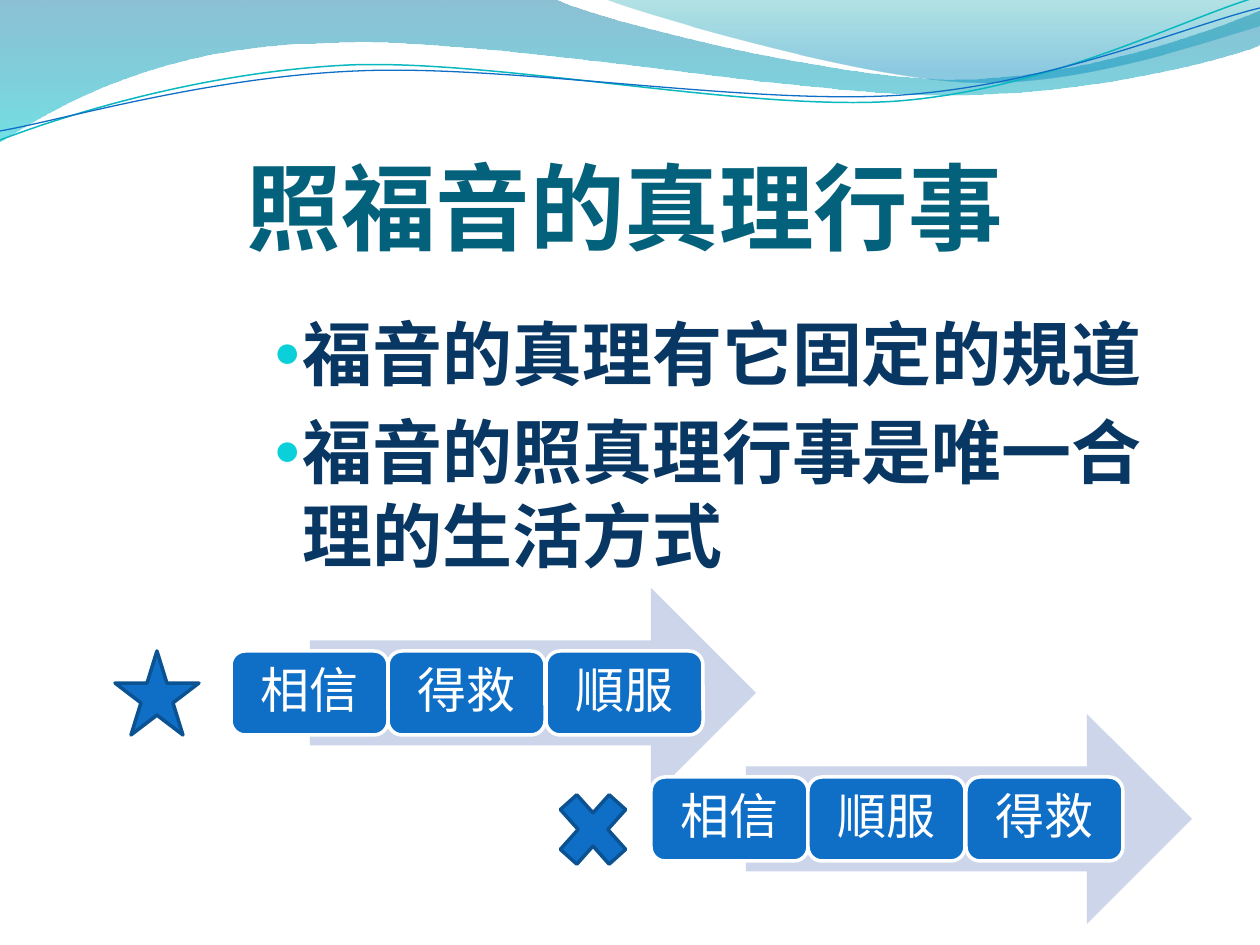
import pptx
import pptx.dml.color
import pptx.enum.shapes
import pptx.enum.text
import pptx.oxml
import pptx.oxml.ns
import pptx.util
from lxml import etree

PX = 914400 / 126
SHAPES = pptx.enum.shapes.MSO_SHAPE
ALIGN = pptx.enum.text.PP_ALIGN
ANCHOR = pptx.enum.text.MSO_ANCHOR
Pt = pptx.util.Pt
qn = pptx.oxml.ns.qn


def emu(*lengths):
    """Turn px lengths into a list of EMU values."""
    return [pptx.util.Emu(round(length * PX)) for length in lengths]


def rgb(value):
    return pptx.dml.color.RGBColor.from_string(value)


deck = pptx.Presentation()
deck.slide_width, deck.slide_height = emu(1260, 945)
slide = deck.slides.add_slide(deck.slide_layouts[1])
shapes = slide.shapes

# Waves: a start point, then steps of one point (line) or three points (cubic curve)
waves = [
    ((0, 0), [[(554, -1)], [(600, 21), (837, 79), (955, 79)],
              [(1075, 79), (1207, 33), (1260, 11)], [(1261, 45)],
              [(1239, 55), (1096, 96), (940, 95)],
              [(784, 94), (481, 35), (324, 43)],
              [(163, 45), (58, 105), (-1, 142)]],
     [(0, "0074A1", 45), (1, "00C6CF", 55)], None),
    ((604, -1), [[(641, 14), (859, 78), (969, 82)],
                 [(1079, 87), (1211, 40), (1260, 26)], [(1260, 0)]],
     [(0, "00A1A9", 30), (0.8, "008BBF", 45)], None),
    ((0, 140), [[(60, 117), (199, 72), (349, 65)],
                [(498, 59), (747, 112), (898, 101)],
                [(1050, 89), (1182, 19), (1257, -3)]], None, ("0AB8BF", 0.85)),
    ((0, 131), [[(59, 121), (207, 77), (357, 71)],
                [(508, 64), (752, 106), (903, 95)],
                [(1054, 84), (1186, 26), (1260, 8)]], None, ("0F6FC6", 0.75)),
]
for start, steps, gradient, stroke in waves:
    builder = shapes.build_freeform(*emu(*start))
    builder.add_line_segments([emu(*point) for step in steps for point in step],
                              close=gradient is not None)
    wave = builder.convert_to_shape()
    wave.shadow.inherit = False

    # Join each three line segments of a curve step into one cubic curve
    segments = iter(list(wave._element.spPr.iter(qn("a:lnTo"))))
    for step in steps:
        first, *others = [next(segments) for _ in step]
        if others:
            first.addprevious(curve := pptx.oxml.parse_xml(
                '<a:cubicBezTo xmlns:a="http://schemas.openxmlformats.org/drawingml/2006/main"/>'))
            for segment in [first] + others:
                curve.append(segment[0])
                segment.getparent().remove(segment)

    if gradient:
        wave.line.fill.background()
        wave.fill.gradient()
        wave.fill.gradient_angle = 270
        for stop, (position, color, opacity) in zip(wave.fill.gradient_stops, gradient):
            stop.position = position
            stop.color.rgb = rgb(color)
        for color_xml, (_, _, opacity) in zip(wave._element.spPr.iter(qn("a:srgbClr")), gradient):
            etree.SubElement(color_xml, qn("a:alpha")).set("val", str(opacity * 1000))
    else:
        wave.fill.background()
        wave.line.color.rgb = rgb(stroke[0])
        wave.line.width = Pt(stroke[1])

# Title and list
title = shapes.title
title.left, title.top, title.width, title.height = emu(42, 115, 1166, 147)
heading = title.text_frame
heading.text = "照福音的真理行事"
heading.auto_size = pptx.enum.text.MSO_AUTO_SIZE.NONE
heading.vertical_anchor = ANCHOR.BOTTOM
heading.margin_left, heading.margin_right, heading.margin_bottom = 0, 0, 0
heading.paragraphs[0].alignment = ALIGN.CENTER

body = slide.placeholders[1]
body.left, body.top, body.width, body.height = emu(126, 304, 1050, 577)
truths = body.text_frame
truths.text = "福音的真理有它固定的規道\n福音的照真理行事是唯一合理的生活方式"
truths.auto_size = pptx.enum.text.MSO_AUTO_SIZE.NONE
margin, hanging = emu(164, -29)
for truth in truths.paragraphs:
    truth.level = 2
    truth.line_spacing = Pt(48)
    truth.space_before = Pt(8)
    properties = truth._p.get_or_add_pPr()
    properties.set("marL", str(margin))
    properties.set("indent", str(hanging))
    bullet_color = etree.SubElement(properties, qn("a:buClr"))
    etree.SubElement(bullet_color, qn("a:srgbClr")).set("val", "0BD0D9")
    etree.SubElement(properties, qn("a:buSzPct")).set("val", "65000")
    etree.SubElement(properties, qn("a:buChar")).set("char", "●")

for frame, size, color in ((heading, 54, "04617B"), (truths, 40, "083763")):
    for paragraph in frame.paragraphs:
        font = paragraph.runs[0].font
        font.name, font.size, font.bold = "Calibri", Pt(size), True
        font.color.rgb = rgb(color)

# Two sequences, each an arrow with three steps on it
sequences = [
    (310, 588, 231, ["相信", "得救", "順服"]),
    (746, 714, 651, ["相信", "順服", "得救"]),
]
for arrow_left, arrow_top, steps_left, words in sequences:
    arrow = shapes.add_shape(SHAPES.RIGHT_ARROW, *emu(arrow_left, arrow_top, 446, 210))
    arrow.shadow.inherit = False
    arrow.fill.solid()
    arrow.fill.fore_color.rgb = rgb("CCD5EA")
    arrow.line.fill.background()
    for i, word in enumerate(words):
        step = shapes.add_shape(SHAPES.ROUNDED_RECTANGLE,
                                *emu(steps_left + i * 315 // 2, arrow_top + 63, 157, 84))
        step.shadow.inherit = False
        step.fill.solid()
        step.fill.fore_color.rgb = rgb("0F6FC6")
        step.line.color.rgb = rgb("FFFFFF")
        step.line.width = Pt(2)
        step.text_frame.text = word
        step.text_frame.vertical_anchor = ANCHOR.MIDDLE
        label = step.text_frame.paragraphs[0]
        label.alignment = ALIGN.CENTER
        label.line_spacing = 0.9
        font = label.runs[0].font
        font.name, font.size = "Arial", Pt(28)
        font.color.rgb = rgb("FFFFFF")

# Marks for the wrong and the right sequence
for kind, box in ((SHAPES.MATH_MULTIPLY, (546, 777, 94, 105)),
                  (SHAPES.STAR_5_POINT, (115, 651, 84, 84))):
    mark = shapes.add_shape(kind, *emu(*box))
    mark.shadow.inherit = False
    mark.fill.solid()
    mark.fill.fore_color.rgb = rgb("0F6FC6")
    mark.line.color.rgb = rgb("0B5292")
    mark.line.width = Pt(2)

deck.save("out.pptx")
